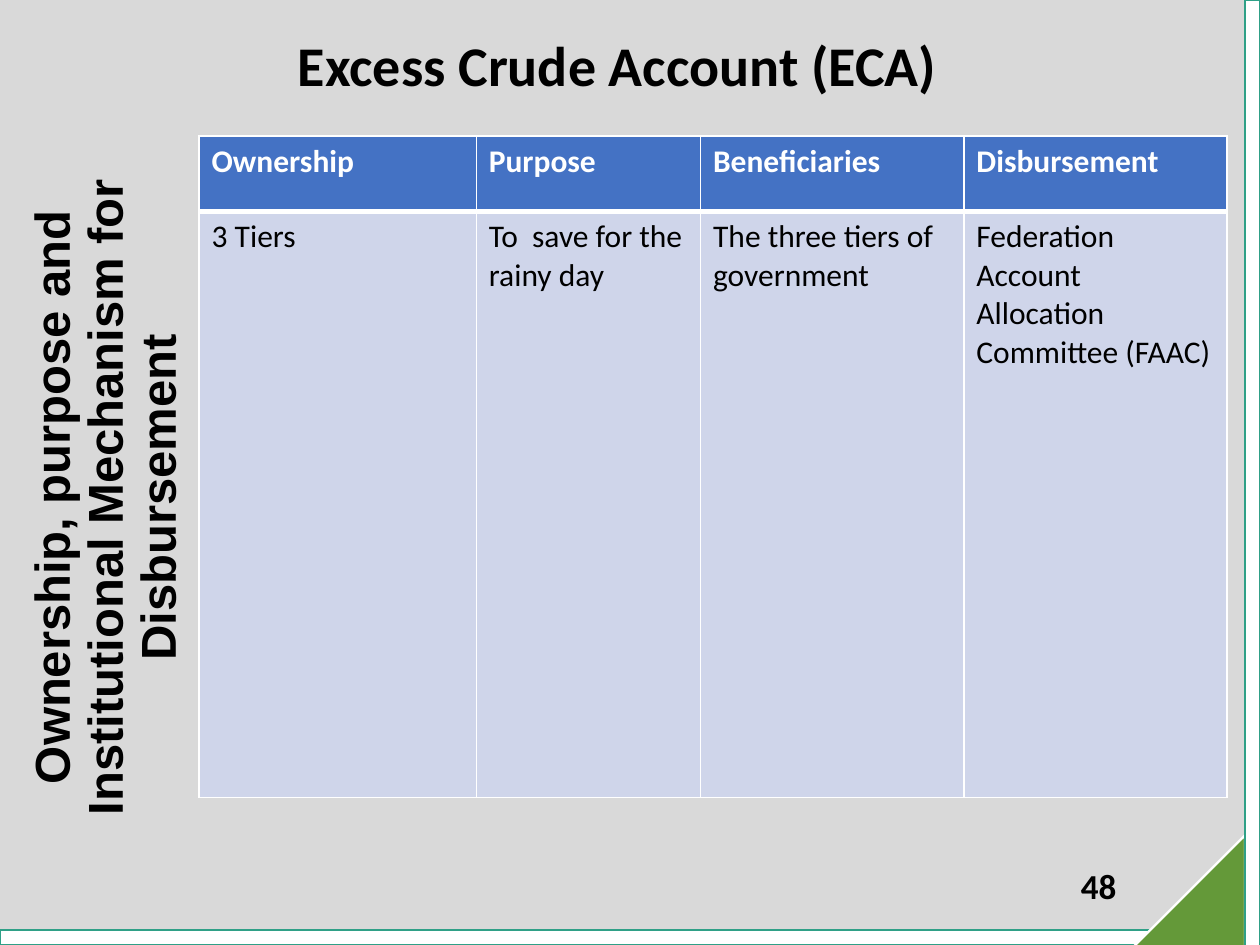
from pptx import Presentation
from pptx.dml.color import RGBColor
from pptx.enum.shapes import MSO_SHAPE
from pptx.enum.text import MSO_ANCHOR, PP_ALIGN
from pptx.oxml.ns import qn
from pptx.util import Inches, Pt
from lxml.etree import SubElement

BLACK = RGBColor(0, 0, 0)
WHITE = RGBColor(0xFF, 0xFF, 0xFF)
GREY = RGBColor(0xD9, 0xD9, 0xD9)
TEAL = RGBColor(0x2F, 0xA0, 0x87)
GREEN = RGBColor(0x64, 0x99, 0x39)
BLUE = RGBColor(0x44, 0x72, 0xC4)
PALE = RGBColor(0xCF, 0xD5, 0xEA)

COLS = [2.2, 1.78, 2.09, 2.09]
ROWS = [0.6, 4.65]
CELLS = [
    ["Ownership", "Purpose", "Beneficiaries", "Disbursement"],
    ["3 Tiers", "To  save for the rainy day", "The three tiers of government",
     "Federation Account Allocation Committee (FAAC)"],
]


def write(frame, text, size=18, font="Calibri", color=BLACK, bold=True,
          align=PP_ALIGN.LEFT, space=1.0):
    frame.word_wrap = True
    para = frame.paragraphs[0]
    para.alignment = align
    para.line_spacing = space
    run = para.add_run()
    run.text = text
    run.font.size = Pt(size)
    run.font.name = font
    run.font.bold = bold
    run.font.color.rgb = color


def add_box(slide, box, text, anchor=MSO_ANCHOR.MIDDLE, **style):
    frame = slide.shapes.add_textbox(*map(Inches, box)).text_frame
    frame.vertical_anchor = anchor
    write(frame, text, **style)
    return frame


def add_frame(slide, box):
    left, top, width, height = box
    right, base = left + width, top + height
    bar, over, side = 0.12, 0.25, 1.04
    group = slide.shapes.add_group_shape()
    parts = [
        (MSO_SHAPE.RECTANGLE, (left, base - bar, width, bar), 0, WHITE, TEAL),
        (MSO_SHAPE.RIGHT_TRIANGLE,
         (right - bar - side, base - 0.87, side, side), 270, GREEN, WHITE),
        (MSO_SHAPE.RECTANGLE,
         (right - bar, top, bar, height + over), 0, WHITE, TEAL),
    ]
    for kind, place, turn, fill, line in parts:
        shape = group.shapes.add_shape(kind, *map(Inches, place))
        shape.rotation = turn
        shape.shadow.inherit = False
        shape.fill.solid()
        shape.fill.fore_color.rgb = fill
        shape.line.color.rgb = line
        shape.line.width = Pt(1.25)


def add_edges(cell, top, base):
    props = cell._tc.get_or_add_tcPr()
    for tag, width in (("a:lnL", 1), ("a:lnR", 1), ("a:lnT", top), ("a:lnB", base)):
        line = SubElement(props, qn(tag), w=str(Pt(width)))
        fill = SubElement(line, qn("a:solidFill"))
        SubElement(fill, qn("a:srgbClr"), val=str(WHITE))


def add_grid(slide, box):
    table = slide.shapes.add_table(len(ROWS), len(COLS), *map(Inches, box)).table
    for col, width in zip(table.columns, COLS):
        col.width = Inches(width)
    for row, height, texts, head in zip(table.rows, ROWS, CELLS, (True, False)):
        row.height = Inches(height)
        for cell, text in zip(row.cells, texts):
            add_edges(cell, 1 if head else 3, 3 if head else 1)
            cell.fill.solid()
            cell.fill.fore_color.rgb = BLUE if head else PALE
            write(cell.text_frame, text, color=WHITE if head else BLACK, bold=head)


def add_side(slide, box):
    frame = add_box(
        slide, box,
        "Ownership, purpose and Institutional Mechanism for Disbursement",
        anchor=MSO_ANCHOR.TOP, size=28, font="Arial",
        align=PP_ALIGN.CENTER, space=0.9)
    frame.margin_top = Inches(0.13)
    frame._txBody.bodyPr.set("vert", "vert270")


def main():
    deck = Presentation()
    deck.slide_width, deck.slide_height = Inches(10), Inches(7.5)
    slide = deck.slides.add_slide(deck.slide_layouts[6])
    slide.background.fill.solid()
    slide.background.fill.fore_color.rgb = GREY
    add_frame(slide, (0, 0, 10, 7.5))
    add_box(slide, (8.33, 6.83, 0.63, 0.4), "48", size=20, align=PP_ALIGN.RIGHT)
    add_box(slide, (0.4, 0.17, 9, 0.67), "Excess Crude Account (ECA)",
            size=32, align=PP_ALIGN.CENTER)
    add_grid(slide, (1.58, 1.08, 8.17, 5.25))
    add_side(slide, (0.17, 1.17, 1.42, 5.52))
    deck.save("out.pptx")


if __name__ == "__main__":
    main()
